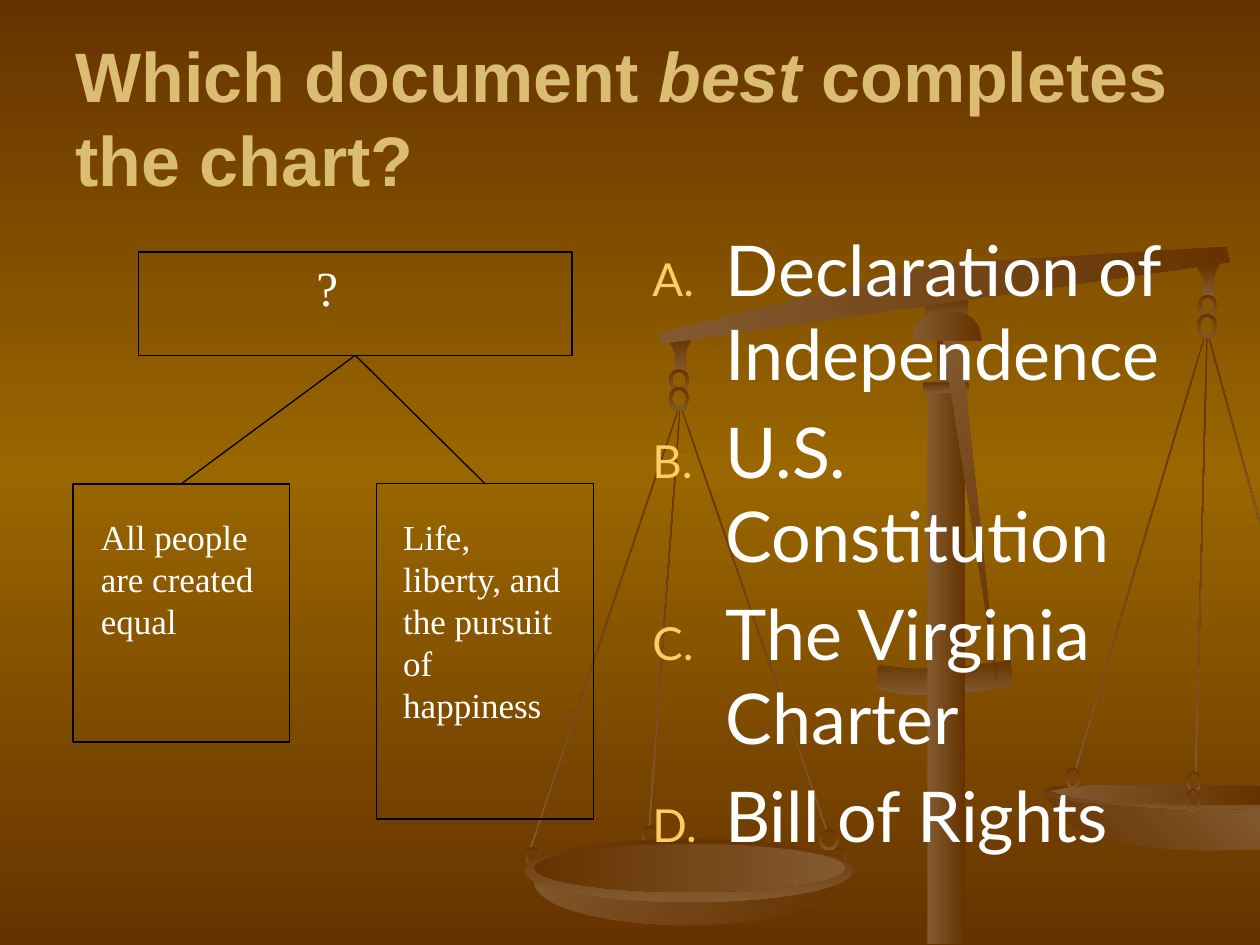
from copy import deepcopy

from lxml import etree
from pptx import Presentation
from pptx.dml.color import RGBColor
from pptx.enum.shapes import MSO_CONNECTOR, MSO_SHAPE
from pptx.enum.text import MSO_ANCHOR, MSO_AUTO_SIZE, PP_ALIGN
from pptx.oxml.ns import qn
from pptx.util import Emu, Inches, Pt

RECT, OVAL = MSO_SHAPE.RECTANGLE, MSO_SHAPE.OVAL
ROUND, RING = MSO_SHAPE.ROUNDED_RECTANGLE, MSO_SHAPE.DONUT
STRAIGHT = MSO_CONNECTOR.STRAIGHT
LEFT, MIDDLE, FIXED = PP_ALIGN.LEFT, MSO_ANCHOR.MIDDLE, MSO_AUTO_SIZE.NONE

DARK, GLOW, BRONZE = "663300", "996600", "835A30"
GOLD, NUMBER, WHITE, BLACK = "DBBD71", "FFCC66", "FFFFFF", "000000"
DOWN, ACROSS, DIAGONAL, RISING = 90, 0, 45, 315

WIRES = [(9.04, 2.6, 3.6, 16.6), (9.53, 2.66, 3.47, 1.5), (9.79, 2.64, 1.53, 344.6),
         (5.98, 3.15, 3.53, 341), (4.79, 3.16, 3.68, 18.6), (5.27, 3.25, 3.31, 4.2)]
HOOKS = [(5.31, 2.68), (9.5, 2.09)]
HOOK = [(0.18, 0), (0, 0.02), (0.05, 0.12), (0.05, 0.26), (0.13, 0.26), (0.13, 0.11)]
CHAIN_LINKS = [(5.31, 2.93, 0.16, 0.17), (5.31, 3.07, 0.16, 0.19),
               (9.51, 2.34, 0.15, 0.17), (9.5, 2.49, 0.16, 0.19)]
PAN_LINKS = [(8.46, 6.09, 0.11, 0.17), (9.42, 6.12, 0.11, 0.17), (5.09, 6.55, 0.15, 0.16),
             (6.56, 6.72, 0.16, 0.19), (4.17, 6.72, 0.12, 0.16)]
FRONT_LINKS = [(6.5, 6.58, 0.16, 0.17), (9.41, 6.26, 0.12, 0.19)]
CROSSBAR = [(6.97, 5.28), (7.24, 5.31), (7.57, 5.3), (8.02, 5.24), (8.04, 5.44),
            (7.82, 5.48), (7.51, 5.52), (7.14, 5.51), (6.96, 5.47)]
PAN_RIM = [(9.58, 6.24), (8.85, 6.23), (8.36, 6.24), (8.27, 6.28), (8.32, 6.33),
           (8.52, 6.38), (8.94, 6.42), (9.35, 6.44), (10, 6.45), (10, 6.26)]
PAN_BOWL = [(8.31, 6.33), (8.42, 6.49), (8.65, 6.63), (8.92, 6.7), (9.28, 6.74),
            (9.57, 6.75), (10, 6.74), (10, 6.43), (9.18, 6.42), (8.57, 6.37)]
PAN_INSIDE = [(9.56, 6.23), (8.69, 6.23), (8.43, 6.26), (8.34, 6.28), (8.52, 6.33),
              (8.93, 6.37), (9.55, 6.39), (10, 6.39), (10, 6.24)]
BEAM = [(9.73, 1.96), (9.76, 2.08), (5.25, 2.73), (5.24, 2.64), (7.37, 2.12), (7.59, 2.09)]
POINTER = [(7.91, 5.39), (7.5, 2.8), (7.48, 2.68), (7.6, 2.65), (7.63, 2.77)]
DOME = [(7.52, 2.47), (7.63, 2.48), (7.72, 2.53), (7.77, 2.6), (7.79, 2.71),
        (7.24, 2.71), (7.26, 2.6), (7.32, 2.53), (7.4, 2.48)]


def rgb(value):
    """Turn a hex string into a colour."""
    return RGBColor.from_string(value)


class Deck:
    """Hold the style and the current slide on a grid of 10 columns by 7.5 rows."""

    def __init__(self, prs):
        """Add a title-only slide."""
        self.cell = prs.slide_width / 10
        self.s = prs.slides.add_slide(prs.slide_layouts[5])

    def grid(self, *values):
        """Convert grid cells to lengths."""
        return [Emu(round(v * self.cell)) for v in values]

    def gradient(self, fill, colors, angle):
        """Apply a two-stop gradient with a clockwise angle."""
        fill.gradient()
        fill.gradient_angle = (360 - angle) % 360
        for i, (stop, color) in enumerate(zip(fill.gradient_stops, colors)):
            stop.position = i
            stop.color.rgb = rgb(color)

    def background(self):
        """Fade from dark to a glowing middle and back."""
        fill = self.s.background.fill
        self.gradient(fill, (DARK, GLOW), DOWN)
        fill.gradient_stops[1].position = 0.5
        stops = self.s.element.find(".//" + qn("a:gsLst"))
        last = deepcopy(stops[0])
        last.set("pos", "100000")
        stops.append(last)

    def metal(self, sp, angle, bright_first):
        """Give a piece of the scales its metallic finish."""
        colors = (BRONZE, DARK) if bright_first else (DARK, BRONZE)
        self.gradient(sp.fill, colors, angle)
        sp.line.fill.background()
        sp.shadow.inherit = False

    def piece(self, kind, box, angle=DOWN, bright_first=False, rotation=0, adjust=None):
        """Add a preset shape of the scales."""
        sp = self.s.shapes.add_shape(kind, *self.grid(*box))
        sp.rotation = rotation
        if adjust is not None:
            sp.adjustments[0] = adjust
        self.metal(sp, angle, bright_first)

    def outline(self, points, angle=DOWN, bright_first=False):
        """Add a free outline of the scales."""
        start, *rest = [self.grid(*point) for point in points]
        builder = self.s.shapes.build_freeform(*start)
        builder.add_line_segments(rest, close=True)
        self.metal(builder.convert_to_shape(), angle, bright_first)

    def links(self, boxes):
        """Add chain links."""
        for box in boxes:
            self.piece(RING, box, adjust=0.14)

    def title(self, box, runs):
        """Place the title; runs are pairs of text and italic."""
        sp = self.s.shapes.title
        sp.left, sp.top, sp.width, sp.height = self.grid(*box)
        tf = sp.text_frame
        tf.auto_size, tf.vertical_anchor = FIXED, MIDDLE
        p = tf.paragraphs[0]
        p.alignment = LEFT
        self.font(p, "Arial", 40, GOLD)
        p.font.bold = True
        for text, italic in runs:
            r = p.add_run()
            r.text, r.font.italic = text, italic

    def font(self, p, name, size, color):
        """Set the font of a paragraph."""
        p.font.name, p.font.size, p.font.color.rgb = name, Pt(size), rgb(color)

    def text(self, box, lines, name="Times New Roman", size=20, inset=0.04):
        """Add a wrapping text box and return its paragraphs."""
        tf = self.s.shapes.add_textbox(*self.grid(*box)).text_frame
        tf.word_wrap = True
        tf.margin_left = tf.margin_right = Inches(inset)
        tf.margin_top = tf.margin_bottom = Inches(min(inset, 0.05))
        tf.text = "\n".join(lines)
        for p in tf.paragraphs:
            self.font(p, name, size, WHITE)
        return tf.paragraphs

    def choices(self, box, lines):
        """Add the lettered answers."""
        for p in self.text(box, lines, "Lato", 40, 0.1):
            p.space_before = Pt(8)
            pr = p._p.get_or_add_pPr()
            indent = Inches(0.58)
            pr.set("marL", str(indent))
            pr.set("indent", str(-indent))
            bullet = [etree.Element(qn(tag)) for tag in ("a:buClr", "a:buSzPct", "a:buAutoNum")]
            etree.SubElement(bullet[0], qn("a:srgbClr"), val=NUMBER)
            bullet[1].set("val", "65000")
            bullet[2].set("type", "alphaUcPeriod")
            pr.find(qn("a:spcBef")).addnext(bullet[0])
            bullet[0].addnext(bullet[1])
            bullet[1].addnext(bullet[2])

    def frame(self, box):
        """Add an unfilled chart box."""
        sp = self.s.shapes.add_shape(RECT, *self.grid(*box))
        sp.fill.background()
        sp.line.color.rgb, sp.line.width = rgb(BLACK), Pt(0.75)
        sp.shadow.inherit = False

    def branch(self, start, end):
        """Add a line between chart boxes."""
        sp = self.s.shapes.add_connector(STRAIGHT, *self.grid(*start, *end))
        sp.line.color.rgb, sp.line.width = rgb(BLACK), Pt(0.75)
        etree.SubElement(sp._element.spPr, qn("a:effectLst"))

    def scales(self):
        """Draw the balance scales from back to front."""
        self.piece(RECT, (7.34, 2.37, 0.34, 0.18))
        self.piece(OVAL, (7.46, 2.06, 0.08, 0.08))
        for x, y, length, rotation in WIRES:
            self.piece(RECT, (x, y, 0.01, length), rotation=rotation)
        self.outline(CROSSBAR)
        self.outline(PAN_RIM)
        self.outline(PAN_BOWL, RISING)
        self.outline(PAN_INSIDE, ACROSS, True)
        for x, y in HOOKS:
            self.outline([(x + dx, y + dy) for dx, dy in HOOK])
        self.links(CHAIN_LINKS)
        self.outline(BEAM, ACROSS, True)
        self.links(PAN_LINKS)
        self.piece(OVAL, (4.24, 6.66, 2.4, 0.68), DIAGONAL, True)
        self.piece(OVAL, (4.16, 6.66, 2.61, 0.5))
        self.piece(OVAL, (4.24, 6.7, 2.47, 0.38), ACROSS)
        self.links(FRONT_LINKS)
        self.piece(RECT, (7.36, 3.08, 0.3, 4.41), ACROSS, True)
        self.piece(RECT, (7.44, 2.68, 0.13, 0.42))
        self.piece(ROUND, (7.33, 3.03, 0.36, 0.09), adjust=0.17)
        self.outline(POINTER, DIAGONAL, True)
        self.outline(DOME, ACROSS, True)


def main():
    """Build and save the slide."""
    prs = Presentation()
    prs.slide_width, prs.slide_height = Inches(10), Inches(7.5)
    deck = Deck(prs)
    deck.background()
    deck.scales()
    deck.title((0.5, 0.3, 9, 1.25), [("Which document ", False), ("best ", True),
                                     ("completes the chart?", False)])
    deck.choices((5.08, 1.75, 4.92, 4.95), ["Declaration of Independence", "U.S. Constitution",
                                            "The Virginia Charter", "Bill of Rights"])
    for box in [(1.1, 2, 3.44, 0.82), (0.58, 3.84, 1.72, 2.05), (2.99, 3.84, 1.72, 2.66)]:
        deck.frame(box)
    for x in (1.44, 3.85):
        deck.branch((2.82, 2.82), (x, 3.84))
    deck.text((2.47, 2, 0.52, 1.02), ["?"], size=28)
    deck.text((0.76, 4.05, 1.38, 1.64), ["All people are created equal"])
    deck.text((3.16, 4.05, 1.38, 2.05), ["Life, liberty, and the pursuit of happiness"])
    prs.save("out.pptx")


if __name__ == "__main__":
    main()
